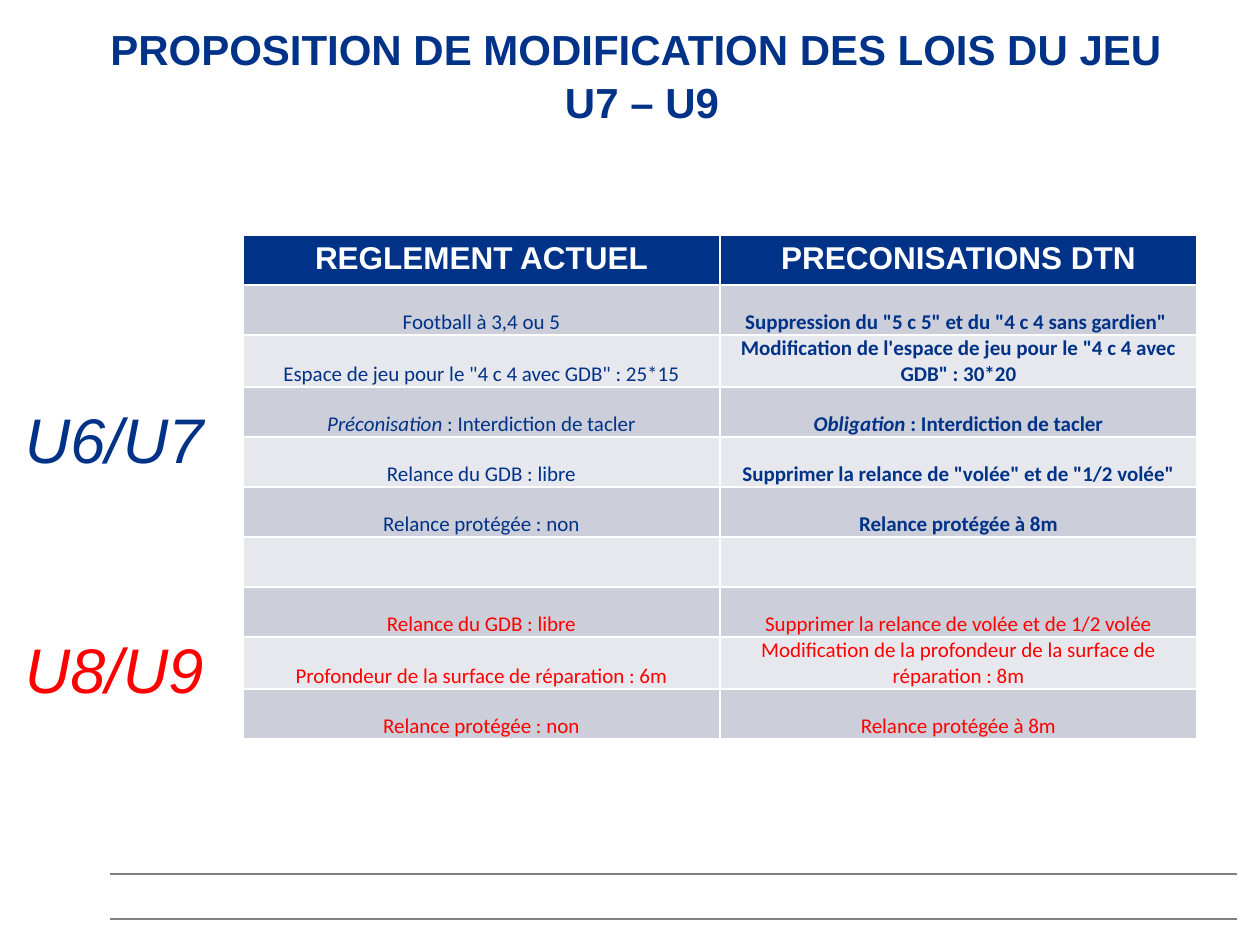
from pptx import Presentation
from pptx.dml.color import RGBColor
from pptx.enum.shapes import MSO_CONNECTOR
from pptx.enum.text import MSO_ANCHOR, MSO_AUTO_SIZE, PP_ALIGN
from pptx.oxml.ns import qn
from pptx.util import Pt
from lxml.etree import SubElement

PX = 914400 / 126
BLUE, RED, WHITE, GREY = "003287", "FF0000", "FFFFFF", "808080"
BANDS = ["CCCED9", "E7E8ED"]
MARGINS = ["margin_left", "margin_top", "margin_right", "margin_bottom"]


def emu(*lengths):
    """Turn px into EMU."""
    return [round(n * PX) for n in lengths]


def add_run(p, text, color, **font):
    r = p.add_run()
    r.text = text
    r.font.color.rgb = RGBColor.from_string(color)
    for name, value in font.items():
        setattr(r.font, name, value)


prs = Presentation()
prs.slide_width, prs.slide_height = emu(1260, 945)
s = prs.slides.add_slide(prs.slide_layouts[5])

# Footer rules
for y in (874, 919):
    line = s.shapes.add_connector(MSO_CONNECTOR.STRAIGHT, *emu(110, y, 1237, y))
    line.line.color.rgb = RGBColor.from_string(GREY)
    line.line.width = Pt(0.75)
    SubElement(line._element.spPr, qn("a:effectLst"))

# Title
title = s.shapes.title
title.left, title.top, title.width, title.height = emu(87, 21, 1110, 120)
tf = title.text_frame
tf.auto_size = MSO_AUTO_SIZE.NONE
tf.word_wrap = True
tf.vertical_anchor = MSO_ANCHOR.TOP
for margin in MARGINS:
    setattr(tf, margin, 0)
p = tf.paragraphs[0]
p.alignment = PP_ALIGN.CENTER
p.line_spacing = 1.05
add_run(p, "PROPOSITION DE MODIFICATION DES LOIS DU JEU \vU7 – U9".split("\v")[0],
        BLUE, name="Arial", size=Pt(24), bold=True)
p.add_line_break()
add_run(p, "U7 – U9", BLUE, name="Arial", size=Pt(24), bold=True)

# Rules table: text before "|" is italic
headers = ["REGLEMENT ACTUEL", "PRECONISATIONS DTN"]
u7_rules = [
    ("Football à 3,4 ou 5", 'Suppression du "5 c 5" et du "4 c 4 sans gardien" '),
    ('Espace de jeu pour le "4 c 4 avec GDB" : 25*15',
     'Modification de l\'espace de jeu pour le "4 c 4 avec GDB" : 30*20'),
    ("Préconisation| : Interdiction de tacler", "Obligation| : Interdiction de tacler"),
    ("Relance du GDB : libre", 'Supprimer la relance de "volée" et de "1/2 volée"'),
    ("Relance protégée : non", "Relance protégée à 8m"),
]
u9_rules = [
    ("Relance du GDB : libre", "Supprimer la relance de volée et de 1/2 volée"),
    ("Profondeur de la surface de réparation : 6m",
     "Modification de la profondeur de la surface de réparation : 8m"),
    ("Relance protégée : non", "Relance protégée à 8m"),
]
rules = u7_rules + [("", "")] + u9_rules
u9_start = len(u7_rules) + 1

table = s.shapes.add_table(len(rules) + 1, 2, *emu(243, 235, 954, 500)).table
for col, header in enumerate(headers):
    cell = table.cell(0, col)
    cell.fill.solid()
    cell.fill.fore_color.rgb = RGBColor.from_string(BLUE)
    p = cell.text_frame.paragraphs[0]
    p.alignment = PP_ALIGN.CENTER
    add_run(p, header, WHITE, name="Arial", size=Pt(18), bold=True)

for i, rule in enumerate(rules):
    color = RED if i >= u9_start else BLUE
    for col, text in enumerate(rule):
        cell = table.cell(i + 1, col)
        cell.fill.solid()
        cell.fill.fore_color.rgb = RGBColor.from_string(BANDS[i % 2])
        cell.vertical_anchor = MSO_ANCHOR.BOTTOM
        for margin, value in zip(MARGINS, emu(1, 1, 1, 0)):
            setattr(cell, margin, value)
        p = cell.text_frame.paragraphs[0]
        p.alignment = PP_ALIGN.CENTER
        italic_part, _, plain_part = text.rpartition("|")
        for part, italic in ((italic_part, True), (plain_part, False)):
            if part:
                add_run(p, part, color, name="Calibri", size=Pt(12), italic=italic,
                        bold=col == 1 and i < u9_start)

# Age group labels
for label, y, color in (("U6/U7", 393, BLUE), ("U8/U9", 622, RED)):
    tf = s.shapes.add_textbox(*emu(25, y, 292, 121)).text_frame
    tf.word_wrap = True
    for margin, value in zip(MARGINS, emu(0, 8, 0, 0)):
        setattr(tf, margin, value)
    add_run(tf.paragraphs[0], label, color, name="Arial", size=Pt(36), italic=True)

prs.save("out.pptx")
